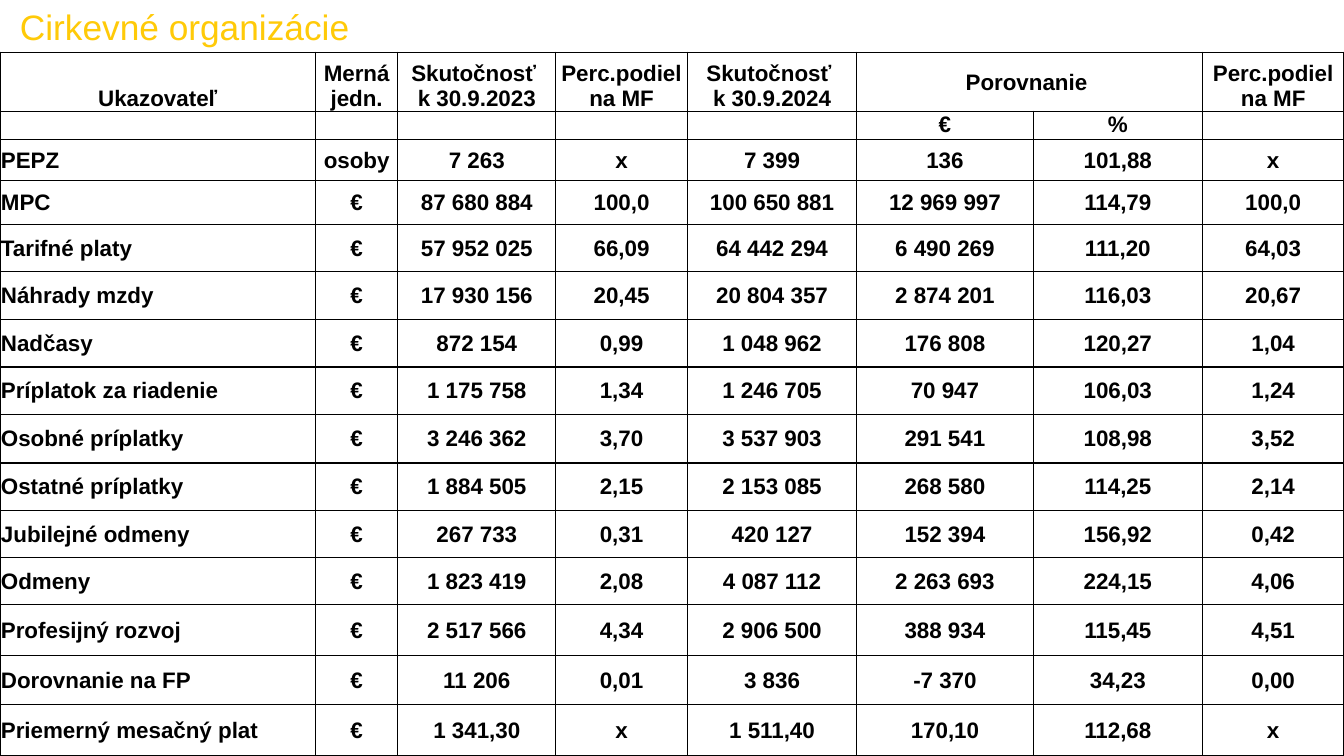
import pptx
import pptx.util
import pptx.dml.color
import pptx.enum.text
import pptx.oxml
import pptx.oxml.ns

Pt = pptx.util.Pt
ALIGN = pptx.enum.text.PP_ALIGN
ANCHOR = pptx.enum.text.MSO_ANCHOR

# Content
TITLE = " Cirkevné organizácie"
HEADER = [
    ("Ukazovateľ", "Merná jedn.", "Skutočnosť \nk 30.9.2023", "Perc.podiel na MF",
     "Skutočnosť \nk 30.9.2024", "Porovnanie ", "", "Perc.podiel na MF"),
    ("", "", "", "", "", "€", "%", ""),
]
INDICATORS = [
    ("PEPZ", "osoby", "7 263", "x", "7 399", "136", "101,88", "x"),
    ("MPC", "€", "87 680 884", "100,0", "100 650 881", "12 969 997", "114,79", "100,0"),
    ("Tarifné platy", "€", "57 952 025", "66,09", "64 442 294", "6 490 269", "111,20", "64,03"),
    ("Náhrady mzdy", "€", "17 930 156", "20,45", "20 804 357", "2 874 201", "116,03", "20,67"),
    ("Nadčasy", "€", "872 154", "0,99", "1 048 962", "176 808", "120,27", "1,04"),
    ("Príplatok za riadenie", "€", "1 175 758", "1,34", "1 246 705", "70 947", "106,03", "1,24"),
    ("Osobné príplatky", "€", "3 246 362", "3,70", "3 537 903", "291 541", "108,98", "3,52"),
    ("Ostatné príplatky", "€", "1 884 505", "2,15", "2 153 085", "268 580", "114,25", "2,14"),
    ("Jubilejné odmeny", "€", "267 733", "0,31", "420 127", "152 394", "156,92", "0,42"),
    ("Odmeny", "€", "1 823 419", "2,08", "4 087 112", "2 263 693", "224,15", "4,06"),
    ("Profesijný rozvoj", "€", "2 517 566", "4,34", "2 906 500", "388 934", "115,45", "4,51"),
    ("Dorovnanie na FP", "€", "11 206", "0,01", "3 836", "-7 370", "34,23", "0,00"),
    ("Priemerný mesačný plat", "€", "1 341,30", "x", "1 511,40", "170,10", "112,68", "x"),
]
ROWS = HEADER + INDICATORS
COMPARISON = 5  # first of the two columns under the joint heading

# Layout in points
SLIDE_WIDTH, SLIDE_HEIGHT = 960, 540
TITLE_WIDTH, TITLE_HEIGHT = 676.8, 37.4
COLUMN_WIDTHS = [225.4, 58.8, 112.8, 94, 121, 126, 121, 101]
ROW_HEIGHTS = [42.1, 19.4, 29, 31.6, 33.8, 34, 34, 34, 34.6, 34, 33.6, 33.4, 36.6, 35.2, 36.4]
COLORS = {"title": "FFCA08", "text": "000000", "border": "000000", "cell": "FFFFFF"}
TITLE_FONT = {"name": "Arial", "size": Pt(25.2), "bold": False}
CELL_FONT = {"name": "Arial", "size": Pt(16), "bold": True}
CELL_FORMAT = {"margin_left": Pt(0.7), "margin_right": Pt(0.7),
               "margin_top": Pt(0.7), "margin_bottom": Pt(0)}


def color(name):
    return pptx.dml.color.RGBColor.from_string(COLORS[name])


def set_all(target, values):
    for name, value in values.items():
        setattr(target, name, value)


def add_borders(cell):
    properties = cell._tc.get_or_add_tcPr()
    for side in ("lnL", "lnR", "lnT", "lnB"):
        properties.append(pptx.oxml.parse_xml(
            f'<a:{side} {pptx.oxml.ns.nsdecls("a")} w="{Pt(1)}"><a:solidFill>'
            f'<a:srgbClr val="{COLORS["border"]}"/></a:solidFill></a:{side}>'))


def fill_cell(cell, text, alignment, anchor):
    set_all(cell, CELL_FORMAT)
    cell.vertical_anchor = anchor
    add_borders(cell)
    cell.fill.solid()
    cell.fill.fore_color.rgb = color("cell")
    cell.text = text
    for paragraph in cell.text_frame.paragraphs:
        paragraph.alignment = alignment
        for run in paragraph.runs:
            set_all(run.font, CELL_FONT)
            run.font.color.rgb = color("text")
        # Keeps the line height of empty cells within their row
        if not text:
            paragraph._p.get_or_add_endParaRPr().set("sz", "1600")


def anchor_for(row, column):
    if row == 0 and column != COMPARISON:
        return ANCHOR.BOTTOM
    return ANCHOR.TOP if row == 1 else ANCHOR.MIDDLE


presentation = pptx.Presentation()
presentation.slide_width, presentation.slide_height = Pt(SLIDE_WIDTH), Pt(SLIDE_HEIGHT)
slide = presentation.slides.add_slide(presentation.slide_layouts[5])

# Title
title = slide.shapes.title
set_all(title, {"left": Pt(0), "top": Pt(0),
                "width": Pt(TITLE_WIDTH), "height": Pt(TITLE_HEIGHT)})
title.text_frame.text = TITLE
title.text_frame.vertical_anchor = ANCHOR.BOTTOM
title_paragraph = title.text_frame.paragraphs[0]
title_paragraph.alignment = ALIGN.LEFT
set_all(title_paragraph.runs[0].font, TITLE_FONT)
title_paragraph.runs[0].font.color.rgb = color("title")

# Table of indicators
table = slide.shapes.add_table(
    len(ROWS), len(COLUMN_WIDTHS), Pt(0), Pt(TITLE_HEIGHT),
    Pt(sum(COLUMN_WIDTHS)), Pt(sum(ROW_HEIGHTS))).table
set_all(table, {"first_row": False, "horz_banding": False})
for table_column, width in zip(table.columns, COLUMN_WIDTHS):
    table_column.width = Pt(width)
for table_row, height in zip(table.rows, ROW_HEIGHTS):
    table_row.height = Pt(height)
for row, texts in enumerate(ROWS):
    for column, text in enumerate(texts):
        is_label = column == 0 and row >= len(HEADER)
        alignment = ALIGN.LEFT if is_label else ALIGN.CENTER
        fill_cell(table.cell(row, column), text, alignment, anchor_for(row, column))
table.cell(0, COMPARISON).merge(table.cell(0, COMPARISON + 1))

presentation.save("out.pptx")
